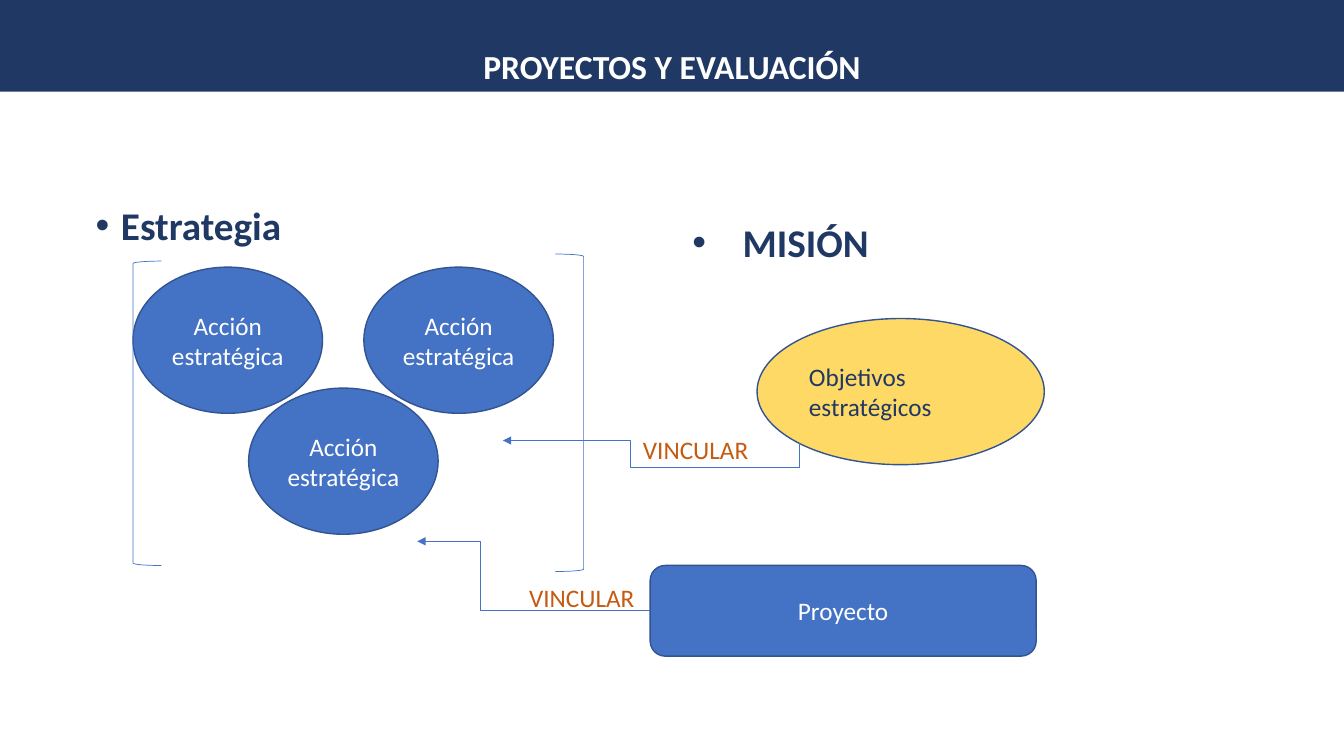
from lxml.etree import SubElement as Sub
from pptx import Presentation
from pptx.dml.color import RGBColor as RGB
from pptx.enum.shapes import MSO_CONNECTOR as Link, MSO_SHAPE as Kind
from pptx.enum.text import MSO_ANCHOR as Anchor, MSO_AUTO_SIZE as Fit, PP_ALIGN as Align
from pptx.oxml.ns import qn
from pptx.util import Inches, Pt

HUES = {"navy": "203864", "blue": "4472C4", "edge": "325491",
        "gold": "FFD966", "rust": "C55A11", "white": "FFFFFF"}
INK = {name: RGB.from_string(code) for name, code in HUES.items()}

deck = Presentation()
deck.slide_width, deck.slide_height = Inches(13.33), Inches(7.5)
COL, ROW = deck.slide_width / 40, deck.slide_height / 30
slide = deck.slides.add_slide(deck.slide_layouts[1])
shapes = slide.shapes


def grid(*cells):
    """Turn alternating columns and rows into lengths."""
    return [round(n * (ROW if i % 2 else COL)) for i, n in enumerate(cells)]


def write(shape, text, hue, size=18, bold=False, align=Align.LEFT, indent=0):
    """Fill a shape with one paragraph; an indent in inches adds a bullet."""
    para = shape.text_frame.paragraphs[0]
    para.text, para.alignment = text, align
    look = {"name": "Calibri", "size": Pt(size), "bold": bold}
    for key, value in look.items():
        setattr(para.font, key, value)
    para.font.color.rgb = INK[hue]
    if indent:
        props = para._p.get_or_add_pPr()
        props.set("marL", str(Inches(indent)))
        props.set("indent", str(-Inches(indent)))
        Sub(props, qn("a:buFont"), typeface="Arial")
        Sub(props, qn("a:buChar"), char="•")


# Title band and strategy heading
title, body = shapes.title, slide.placeholders[1]
for holder, box, anchor in ((title, (0, 0, 40, 3.64), Anchor.BOTTOM),
                            (body, (2.55, 8, 34.5, 19.04), Anchor.TOP)):
    holder.left, holder.top, holder.width, holder.height = grid(*box)
    frame = {"auto_size": Fit.NONE, "vertical_anchor": anchor, "word_wrap": True}
    for key, value in frame.items():
        setattr(holder.text_frame, key, value)
title.fill.solid()
title.fill.fore_color.rgb = INK["navy"]
write(title, "PROYECTOS Y EVALUACIÓN", "white", 24, True, Align.CENTER)
lead = body.text_frame.paragraphs[0]
lead.line_spacing, lead.space_before = 0.9, Pt(10)
write(body, "Estrategia", "navy", 28, True, indent=0.25)

# Actions, goals and project
action = "Acción estratégica"
nodes = [(Kind.OVAL, (x, y, 5.64, 5.8), "blue", action, "white", Align.CENTER)
         for x, y in ((3.96, 10.6), (10.83, 10.6), (7.4, 15.4))]
nodes += [
    (Kind.OVAL, (22.53, 12.64, 8.55, 5.8), "gold", "Objetivos estratégicos", "navy", Align.LEFT),
    (Kind.ROUNDED_RECTANGLE, (19.35, 22.44, 11.49, 3.6), "blue", "Proyecto", "white", Align.CENTER),
]
for kind, box, fill, text, hue, align in nodes:
    node = shapes.add_shape(kind, *grid(*box))
    node.shadow.inherit = False
    node.fill.solid()
    node.fill.fore_color.rgb = INK[fill]
    node.line.color.rgb, node.line.width = INK["edge"], Pt(1)
    write(node, text, hue, align=align)

# Brackets around the actions
for kind, box in ((Kind.RIGHT_BRACKET, (16.53, 10.08, 0.84, 12.6)),
                  (Kind.LEFT_BRACKET, (3.96, 10.36, 0.84, 12.08))):
    side = shapes.add_shape(kind, *grid(*box))
    side.shadow.inherit = False
    side.fill.background()
    side.line.color.rgb, side.line.width = INK["blue"], Pt(0.5)

# Mission heading and link labels
for box, text, look in (
    ((20.31, 8.48, 13.26, 2.28), "MISIÓN", {"hue": "navy", "size": 28, "bold": True, "indent": 0.5}),
    ((18.84, 17.04, 3.81, 1.6), "VINCULAR", {"hue": "rust"}),
    ((15.45, 22.92, 3.81, 1.6), "VINCULAR", {"hue": "rust"}),
):
    write(shapes.add_textbox(*grid(*box)), text, **look)

# Bent arrows; bends are shares of each arrow's own box
for ends, form, turn, bends in (
    ((19.41, 11.64, 19.35, 23.4), "bentConnector4", 90, {"adj1": -12.5, "adj2": 0.57}),
    ((19.35, 24.24, 12.42, 21.48), "bentConnector3", 0, {"adj1": 0.73}),
):
    arrow = shapes.add_connector(Link.ELBOW, *grid(*ends))
    arrow.line.color.rgb, arrow.line.width = INK["blue"], Pt(0.5)
    props = arrow._element.spPr
    props.find(qn("a:xfrm")).set("rot", str(turn * 60000))
    shape = props.find(qn("a:prstGeom"))
    shape.set("prst", form)
    for name, share in bends.items():
        Sub(shape.find(qn("a:avLst")), qn("a:gd"), name=name, fmla=f"val {round(share * 100000)}")
    Sub(props.find(qn("a:ln")), qn("a:tailEnd"), type="triangle")
    Sub(props, qn("a:effectLst"))

deck.save("out.pptx")
